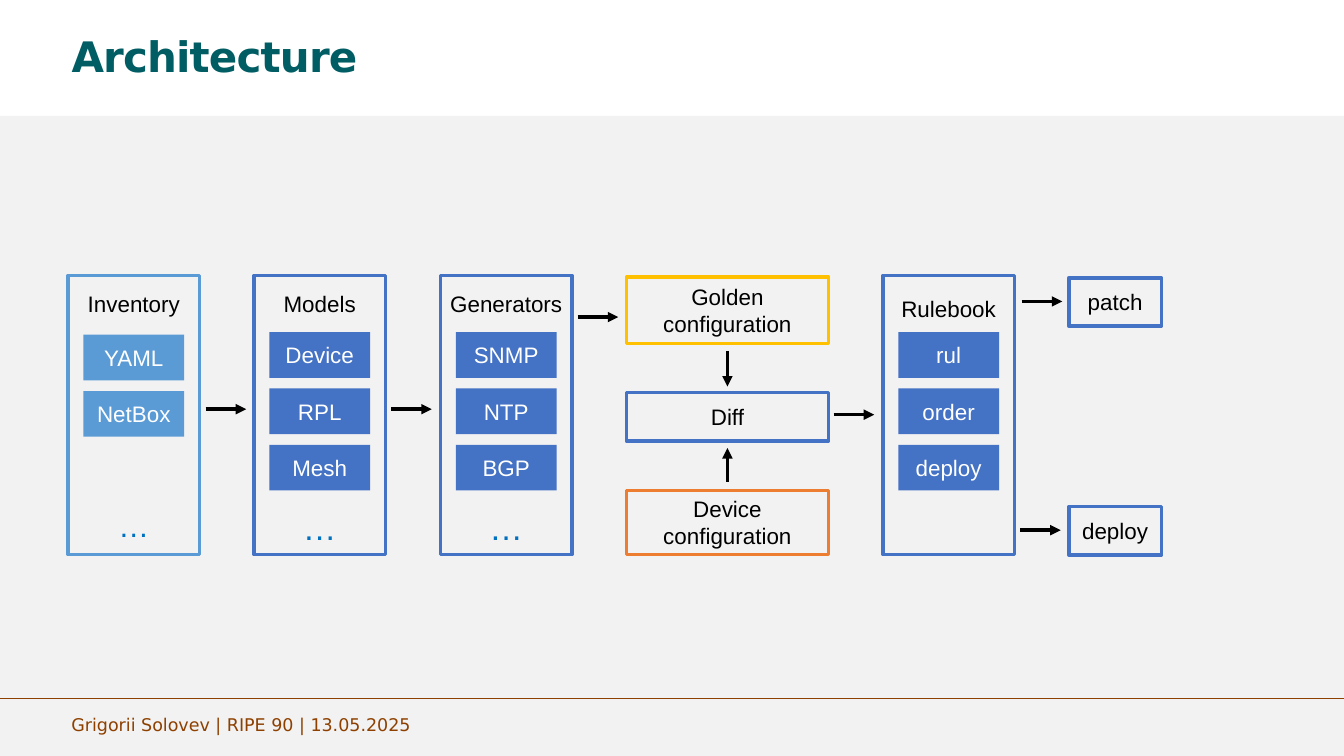
from dataclasses import dataclass

from lxml.etree import SubElement
from pptx import Presentation
from pptx.dml.color import RGBColor
from pptx.enum.shapes import MSO_CONNECTOR, MSO_SHAPE
from pptx.enum.text import MSO_ANCHOR, MSO_AUTO_SIZE, PP_ALIGN
from pptx.oxml.ns import qn
from pptx.shapes.autoshape import Shape
from pptx.shapes.connector import Connector
from pptx.slide import Slide
from pptx.text.text import _Paragraph
from pptx.util import Cm, Pt

BLACK = RGBColor(0x00, 0x00, 0x00)
WHITE = RGBColor(0xFF, 0xFF, 0xFF)
GREY = RGBColor(0xF2, 0xF2, 0xF2)
TEAL = RGBColor(0x00, 0x5D, 0x63)
BROWN = RGBColor(0x8D, 0x40, 0x00)
SKY = RGBColor(0x5B, 0x9B, 0xD5)
BLUE = RGBColor(0x44, 0x72, 0xC4)
AZURE = RGBColor(0x00, 0x70, 0xC0)
GOLD = RGBColor(0xFF, 0xC0, 0x00)
ORANGE = RGBColor(0xED, 0x7D, 0x31)

WIDTH, HEIGHT = 67.74, 38.1
MARGIN = 3.35
STAGE_TOP, STAGE_WIDTH, STAGE_HEIGHT = 13.88, 6.63, 14.07
ITEM_WIDTH, ITEM_HEIGHT, ITEM_STEP = 5.08, 2.3, 2.84
MID_LEFT, MID_WIDTH = 31.57, 10.19
END_LEFT, END_WIDTH = 53.87, 4.67
LOW_BOX = 2.44
ARROW = 2.05


@dataclass
class Stage:
    left: float
    title: str
    items: tuple[str, ...]
    color: RGBColor = BLUE
    inset: float = 0.73
    first: float = 16.74
    dots: int = 48


@dataclass
class Box:
    left: float
    top: float
    width: float
    height: float
    text: str
    color: RGBColor = BLUE


STAGES = (
    Stage(3.43, "Inventory", ("YAML", "NetBox"), SKY, first=16.87, dots=44),
    Stage(12.8, "Models", ("Device", "RPL", "Mesh")),
    Stage(22.2, "Generators", ("SNMP", "NTP", "BGP")),
    Stage(44.5, "Rulebook", ("rul", "order", "deploy"), inset=1.0, dots=0),
)

BOXES = (
    Box(MID_LEFT, 13.97, MID_WIDTH, 3.35, "Golden configuration", GOLD),
    Box(MID_LEFT, 24.71, MID_WIDTH, 3.23, "Device configuration", ORANGE),
    Box(MID_LEFT, 19.79, MID_WIDTH, LOW_BOX, "Diff"),
    Box(END_LEFT, 14.0, END_WIDTH, LOW_BOX, "patch"),
    Box(END_LEFT, 25.53, END_WIDTH, LOW_BOX, "deploy"),
)

ACROSS = ((10.36, 20.62), (19.71, 20.62), (29.11, 15.98),
          (42.01, 20.9), (51.49, 15.19), (51.41, 26.72))
UPDOWN = ((17.68, 19.48), (24.28, 22.58))


def style(para: _Paragraph, size: float, color: RGBColor,
          face: str = "Arial") -> None:
    para.font.size = Pt(size)
    para.font.name = face
    para.font.color.rgb = color


def add_rect(slide: Slide, box: Box, fill: bool) -> Shape:
    shape = slide.shapes.add_shape(
        MSO_SHAPE.RECTANGLE, Cm(box.left), Cm(box.top), Cm(box.width), Cm(box.height))
    shape.shadow.inherit = False
    if fill:
        shape.fill.solid()
        shape.fill.fore_color.rgb = box.color
        shape.line.fill.background()
    else:
        shape.fill.background()
        shape.line.color.rgb = box.color
        shape.line.width = Pt(5)
    if box.text:
        frame = shape.text_frame
        frame.word_wrap = True
        frame.vertical_anchor = MSO_ANCHOR.MIDDLE
        para = frame.paragraphs[0]
        para.text = box.text
        para.alignment = PP_ALIGN.CENTER
        style(para, 32, WHITE if fill else BLACK)
    return shape


def add_stage(slide: Slide, stage: Stage) -> None:
    outer = Box(stage.left, STAGE_TOP, STAGE_WIDTH, STAGE_HEIGHT,
                stage.title, stage.color)
    frame = add_rect(slide, outer, False).text_frame
    frame.vertical_anchor = MSO_ANCHOR.TOP
    frame.margin_top = Cm(stage.inset)
    if stage.dots:
        para = frame.add_paragraph()
        para.text = "…"
        para.alignment = PP_ALIGN.CENTER
        para.space_before = Pt(271)
        style(para, stage.dots, AZURE)
    left = stage.left + (STAGE_WIDTH - ITEM_WIDTH) / 2
    for row, text in enumerate(stage.items):
        top = stage.first + row * ITEM_STEP
        add_rect(slide, Box(left, top, ITEM_WIDTH, ITEM_HEIGHT, text, stage.color), True)


def add_line(slide: Slide, x1: float, y1: float, x2: float, y2: float,
             color: RGBColor, width: float) -> Connector:
    line = slide.shapes.add_connector(
        MSO_CONNECTOR.STRAIGHT, Cm(x1), Cm(y1), Cm(x2), Cm(y2))
    line.line.color.rgb = color
    line.line.width = Pt(width)
    SubElement(line._element.spPr, qn("a:effectLst"))
    return line


def add_arrow(slide: Slide, x1: float, y1: float, x2: float, y2: float) -> None:
    line = add_line(slide, x1, y1, x2, y2, BLACK, 5)
    SubElement(line.line._get_or_add_ln(), qn("a:tailEnd"), type="triangle")


def set_title(slide: Slide) -> None:
    title = slide.shapes.title
    title.left, title.top = Cm(MARGIN), Cm(1.88)
    title.width, title.height = Cm(61.04), Cm(3.99)
    frame = title.text_frame
    frame.auto_size = MSO_AUTO_SIZE.NONE
    frame.vertical_anchor = MSO_ANCHOR.TOP
    para = frame.paragraphs[0]
    para.text = "Architecture"
    para.alignment = PP_ALIGN.LEFT
    para.line_spacing = 0.8
    style(para, 60, TEAL, "DejaVu Sans")
    para.font.bold = True
    para.runs[0]._r.get_or_add_rPr().set("spc", "-120")


def add_footer(slide: Slide) -> None:
    add_line(slide, 0, 35.2, WIDTH, 35.2, BROWN, 2)
    box = slide.shapes.add_textbox(Cm(MARGIN), Cm(35.86), Cm(30.81), Cm(1.32))
    frame = box.text_frame
    frame.word_wrap = True
    frame.vertical_anchor = MSO_ANCHOR.MIDDLE
    para = frame.paragraphs[0]
    para.text = "Grigorii Solovev | RIPE 90 | 13.05.2025"
    style(para, 25, BROWN, "DejaVu Sans")


def main() -> None:
    deck = Presentation()
    deck.slide_width, deck.slide_height = Cm(WIDTH), Cm(HEIGHT)
    slide = deck.slides.add_slide(deck.slide_layouts[5])
    add_rect(slide, Box(0, 5.84, WIDTH, HEIGHT - 5.84, "", GREY), True)
    set_title(slide)
    add_footer(slide)
    for stage in STAGES:
        add_stage(slide, stage)
    for box in BOXES:
        add_rect(slide, box, False)
    for left, top in ACROSS:
        add_arrow(slide, left, top, left + ARROW, top)
    center = MID_LEFT + MID_WIDTH / 2
    for start, end in UPDOWN:
        add_arrow(slide, center, start, center, end)
    deck.save("out.pptx")


if __name__ == "__main__":
    main()
